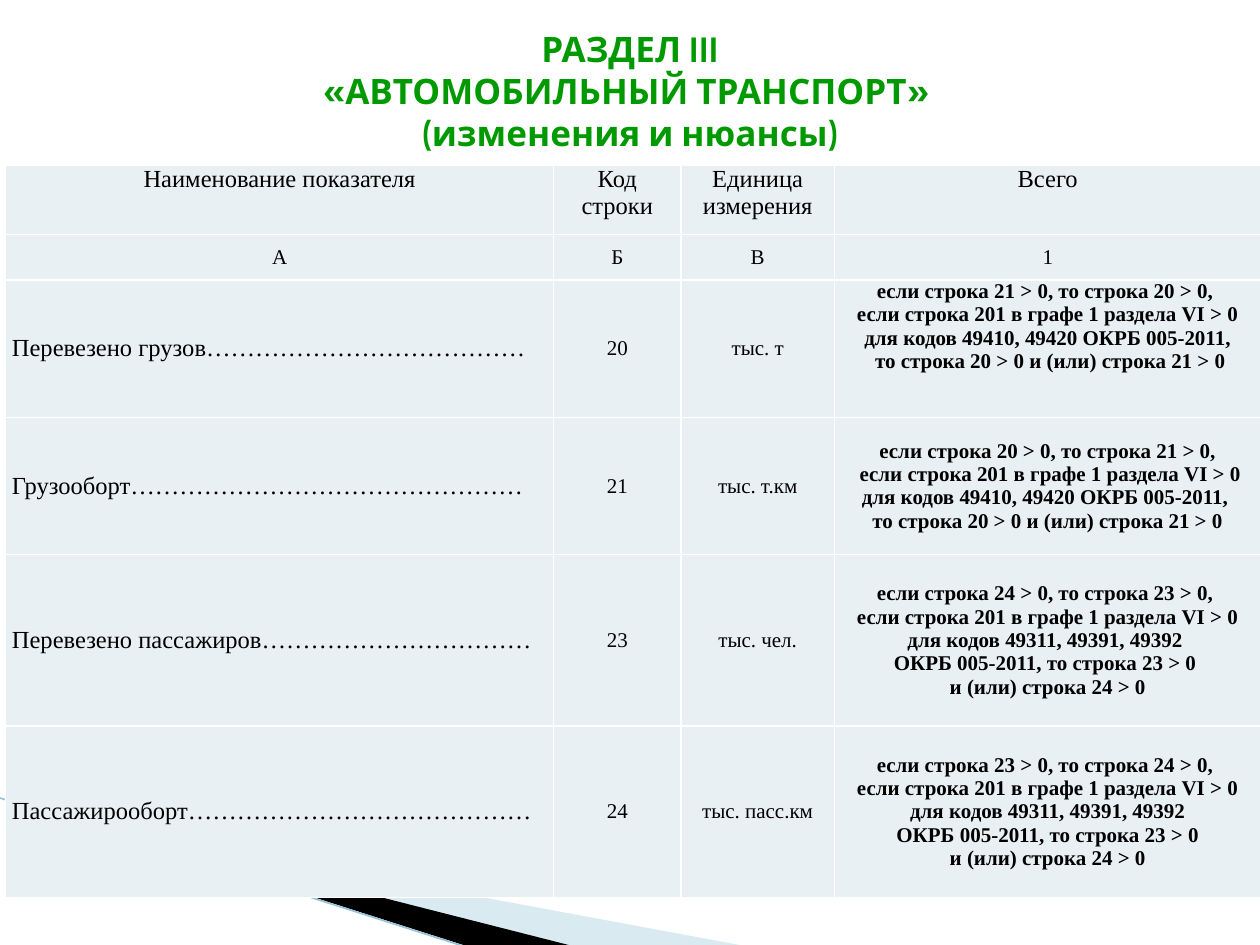
"""Build the slide on section III, road transport."""
from lxml import etree
from pptx import Presentation
from pptx.dml.color import RGBColor
from pptx.enum.shapes import MSO_CONNECTOR
from pptx.enum.text import MSO_ANCHOR, PP_ALIGN
from pptx.oxml.ns import qn
from pptx.util import Pt

LEFT, MID = PP_ALIGN.LEFT, PP_ALIGN.CENTER
TOP, CENTER = MSO_ANCHOR.TOP, MSO_ANCHOR.MIDDLE
LINE = MSO_CONNECTOR.STRAIGHT
SERIF = "Times New Roman"
COLORS = {"title": "009900", "text": "000000", "cell": "E8F0F4", "border": "FFFFFF",
          "pale": "A0CBDC", "dark": "000000", "line": "97C5D8"}

TITLE = "РАЗДЕЛ III\v«АВТОМОБИЛЬНЫЙ ТРАНСПОРТ» \v(изменения и нюансы)"
ROWS = [
    ("Наименование показателя", "Код строки", "Единица измерения", "Всего"),
    ("А", "Б", "В", "1"),
    ("Перевезено грузов…………………………………", "20", "тыс. т",
     "если строка 21 > 0, то строка 20 > 0, \v"
     "если строка 201 в графе 1 раздела VI > 0 для кодов 49410, 49420 ОКРБ 005-2011,\v"
     " то строка 20 > 0 и (или) строка 21 > 0"),
    ("Грузооборт…………………………………………", "21", "тыс. т.км",
     "если строка 20 > 0, то строка 21 > 0,\v"
     " если строка 201 в графе 1 раздела VI > 0 для кодов 49410, 49420 ОКРБ 005-2011, \v"
     "то строка 20 > 0 и (или) строка 21 > 0"),
    ("Перевезено пассажиров……………………………", "23", "тыс. чел.",
     "если строка 24 > 0, то строка 23 > 0, \v"
     "если строка 201 в графе 1 раздела VI > 0 для кодов 49311, 49391, 49392 \v"
     "ОКРБ 005-2011, то строка 23 > 0 \vи (или) строка 24 > 0"),
    ("Пассажирооборт……………………………………", "24", "тыс. пасс.км",
     "если строка 23 > 0, то строка 24 > 0, \v"
     "если строка 201 в графе 1 раздела VI > 0 для кодов 49311, 49391, 49392\v"
     " ОКРБ 005-2011, то строка 23 > 0 \vи (или) строка 24 > 0"),
]
WIDTHS = [313.2, 72.7, 87.8, 243.7]
HEIGHTS = [39.6, 25.9, 78.5, 78.5, 97.9, 97.9]
WEDGES = [
    ("pale", 40, [(39.6, 468.7), (428.4, 540.7), (328.3, 540.7), (39.6, 468)]),
    ("dark", 100, [(38.2, 467.3), (329, 540.7), (267.8, 541.4), (38.9, 468)]),
]


def color(key):
    return RGBColor.from_string(COLORS[key])


def style(para, font, size, key, bold, align):
    para.alignment = align
    for run in para.runs:
        run.font.name, run.font.size, run.font.bold = font, Pt(size), bold
        run.font.color.rgb = color(key)


def add_wedge(shapes, key, alpha, points):
    build = shapes.build_freeform(*points[0], scale=Pt(1))
    build.add_line_segments(points[1:], close=True)
    wedge = build.convert_to_shape()
    wedge.shadow.inherit = False
    wedge.fill.solid()
    wedge.fill.fore_color.rgb = color(key)
    wedge.line.fill.background()
    if alpha < 100:
        tint = wedge.fill._xPr.find(".//" + qn("a:srgbClr"))
        etree.SubElement(tint, qn("a:alpha"), val=str(alpha * 1000))


def add_edge(shapes):
    edge = shapes.add_connector(LINE, Pt(-0.7), Pt(455.8), Pt(267.1), Pt(541.4))
    edge.line.color.rgb = color("line")
    edge.line.width = Pt(0.95)
    etree.SubElement(edge._element.spPr, qn("a:effectLst"))


def add_title(shapes):
    frame = shapes.add_textbox(Pt(36), Pt(15), Pt(648), Pt(73.5)).text_frame
    frame.word_wrap = True
    frame.vertical_anchor = CENTER
    para = frame.paragraphs[0]
    para.text = TITLE
    style(para, "Cabin", 20, "title", True, MID)


def add_border(cell):
    props = cell._tc.get_or_add_tcPr()
    for side in ("lnL", "lnR", "lnT", "lnB"):
        line = etree.SubElement(props, qn("a:" + side), w=str(Pt(1)))
        fill = etree.SubElement(line, qn("a:solidFill"))
        etree.SubElement(fill, qn("a:srgbClr"), val=COLORS["border"])


def fill_cell(cell, text, row, col):
    add_border(cell)
    cell.fill.solid()
    cell.fill.fore_color.rgb = color("cell")
    cell.margin_left = cell.margin_right = Pt(3.6)
    cell.margin_top = cell.margin_bottom = 0
    cell.vertical_anchor = TOP if row == 0 or (row, col) == (2, 3) else CENTER
    body = row > 1
    name = body and col == 0
    para = cell.text_frame.paragraphs[0]
    para.text = text
    size = 14 if row == 0 or name else 12
    style(para, SERIF, size, "text", body and col == 3, LEFT if name else MID)


def add_grid(shapes):
    table = shapes.add_table(len(ROWS), len(WIDTHS), Pt(3.2), Pt(94.5),
                             Pt(sum(WIDTHS)), Pt(sum(HEIGHTS))).table
    for column, width in zip(table.columns, WIDTHS):
        column.width = Pt(width)
    for row, (height, texts) in enumerate(zip(HEIGHTS, ROWS)):
        table.rows[row].height = Pt(height)
        for col, text in enumerate(texts):
            fill_cell(table.cell(row, col), text, row, col)


def main():
    deck = Presentation()
    deck.slide_width, deck.slide_height = Pt(720), Pt(540)
    shapes = deck.slides.add_slide(deck.slide_layouts[6]).shapes
    for wedge in WEDGES:
        add_wedge(shapes, *wedge)
    add_edge(shapes)
    add_title(shapes)
    add_grid(shapes)
    deck.save("out.pptx")


if __name__ == "__main__":
    main()
